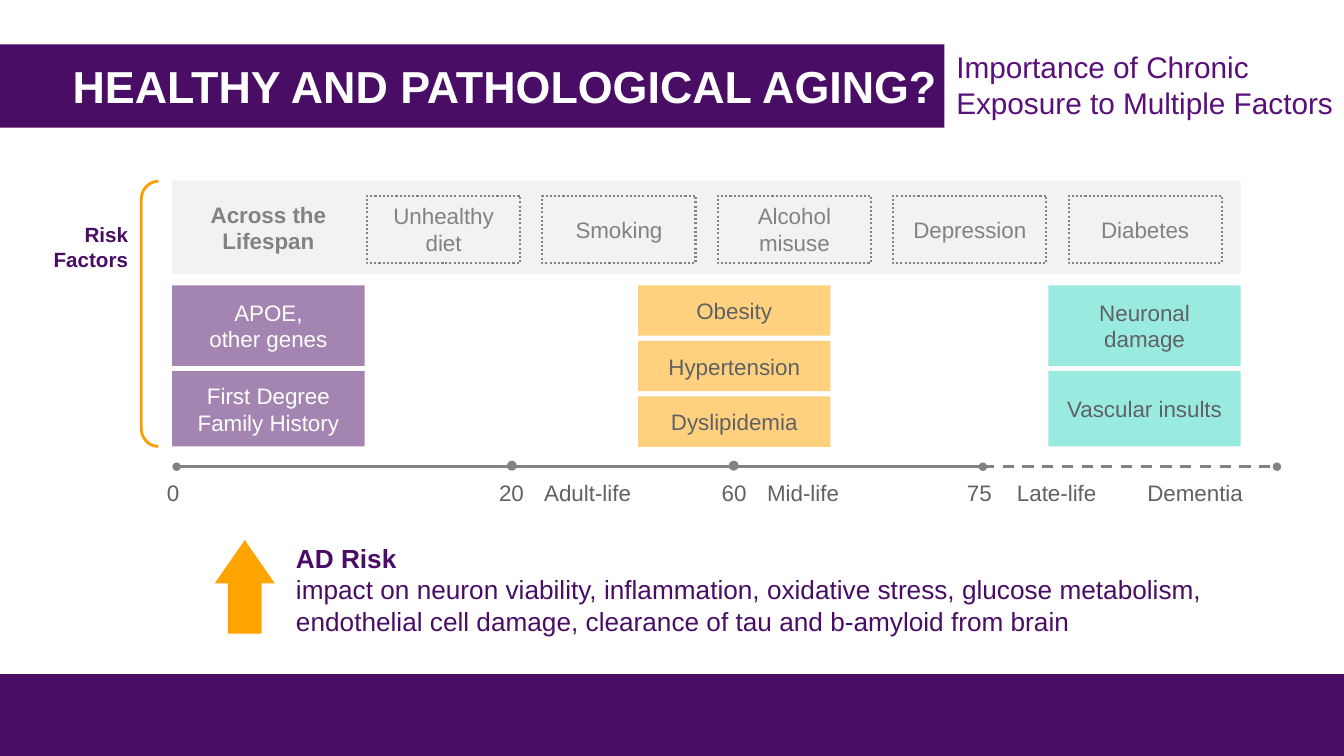
"""Build the slide on chronic risk factors in healthy and pathological aging."""
from dataclasses import dataclass

from pptx import Presentation
from pptx.dml.color import RGBColor
from pptx.enum.dml import MSO_LINE
from pptx.enum.shapes import MSO_CONNECTOR, MSO_SHAPE
from pptx.enum.text import MSO_ANCHOR, PP_ALIGN
from pptx.oxml.ns import qn
from pptx.util import Cm, Pt
from lxml.etree import SubElement


@dataclass(frozen=True)
class Theme:
    font: str = "Arial"
    purple: str = "4A0D66"
    violet: str = "59107A"
    orange: str = "FFA400"
    bracket: str = "F9A000"
    teal: str = "34D9C3"
    pale: str = "E6E6E7"
    grey: str = "808285"
    dark: str = "606164"
    white: str = "FFFFFF"
    title: float = 32
    subtitle: float = 21.3
    summary: float = 18.7
    body: float = 16
    side: float = 14.7


THEME = Theme()

TITLE = "HEALTHY AND PATHOLOGICAL AGING?"
SUBTITLE = "Importance of Chronic Exposure to Multiple Factors"
SIDE_LABEL = "Risk Factors"
LIFESPAN_LABEL = "Across the Lifespan"
LIFESPAN_FACTORS = ["Unhealthy diet", "Smoking", "Alcohol misuse", "Depression", "Diabetes"]
STACKS = [
    (4.34, THEME.purple, THEME.white,
     [("APOE,\nother genes", 2.03), ("First Degree Family History", 1.9)]),
    (16.08, THEME.orange, THEME.dark,
     [("Obesity", 1.27), ("Hypertension", 1.27), ("Dyslipidemia", 1.27)]),
    (26.42, THEME.teal, THEME.dark,
     [("Neuronal damage", 2.03), ("Vascular insults", 1.9)]),
]
TIMELINE_LABELS = [
    ("0", 4.36, 1.04), ("20", 12.89, 1.04), ("60", 18.5, 1.04), ("75", 24.68, 1.04),
    ("Adult-life", 14.81, 3.56), ("Mid-life", 20.24, 2.9),
    ("Late-life", 26.63, 4.19), ("Dementia", 30.12, 4.52),
]
TIMELINE_DOTS = [12.9, 18.49]
SUMMARY = ("AD Risk\nimpact on neuron viability, inflammation, oxidative stress, "
           "glucose metabolism, endothelial cell damage, clearance of tau and "
           "b-amyloid from brain")

STACK_TOP, STACK_GAP, COLUMN_WIDTH = 7.19, 0.13, 4.85
FACTOR_LEFT, FACTOR_PITCH = 9.25, 4.42
TIMELINE_Y, DOT_SIZE = 11.76, 0.25


def write(box, text, size, colour, align=PP_ALIGN.CENTER, bold=False,
          anchor=MSO_ANCHOR.MIDDLE, inset=True, wrap=True, after=None):
    frame = box.text_frame
    frame.text = text
    frame.word_wrap = wrap
    frame.vertical_anchor = anchor
    if not inset:
        frame.margin_left = frame.margin_right = frame.margin_top = frame.margin_bottom = 0
    for para in frame.paragraphs:
        para.alignment = align
        para.font.name = THEME.font
        para.font.size = Pt(size)
        para.font.bold = bold
        para.font.color.rgb = RGBColor.from_string(colour)
        if after:
            para.space_after = Pt(after)
    return frame


def add_text(page, place, *text, **style):
    box = page.shapes.add_textbox(*map(Cm, place))
    return write(box, *text, **style)


def add_shape(page, kind, place, fill=None, alpha=None, line=None, width=None, dash=None):
    shape = page.shapes.add_shape(kind, *map(Cm, place))
    shape.shadow.inherit = False
    if fill:
        shape.fill.solid()
        shape.fill.fore_color.rgb = RGBColor.from_string(fill)
        if alpha:
            colour = next(shape.element.spPr.iter(qn("a:srgbClr")))
            SubElement(colour, qn("a:alpha")).set("val", str(alpha * 1000))
    else:
        shape.fill.background()
    if line:
        shape.line.color.rgb = RGBColor.from_string(line)
        shape.line.width = Pt(width)
        shape.line.dash_style = dash
    else:
        shape.line.fill.background()
    return shape


def add_span(page, start, end, ends, dash=None):
    y = Cm(TIMELINE_Y)
    span = page.shapes.add_connector(MSO_CONNECTOR.STRAIGHT, Cm(start), y, Cm(end), y)
    span.line.color.rgb = RGBColor.from_string(THEME.grey)
    span.line.width = Pt(2)
    span.line.dash_style = dash
    outline = span.element.spPr.find(qn("a:ln"))
    for name in ends:
        SubElement(outline, qn(name)).set("type", "oval")
    SubElement(span.element.spPr, qn("a:effectLst"))


def add_header(page):
    add_text(page, (24.1, 1.24, 9.76, 1.83), SUBTITLE, THEME.subtitle, THEME.violet,
             align=PP_ALIGN.LEFT, anchor=MSO_ANCHOR.TOP, inset=False)
    add_shape(page, MSO_SHAPE.RECTANGLE, (0, 1.12, 23.8, 2.1), THEME.purple)
    add_text(page, (1.83, 1.47, 21.97, 1.37), TITLE, THEME.title, THEME.white,
             align=PP_ALIGN.LEFT, bold=True, anchor=MSO_ANCHOR.TOP, inset=False, wrap=False)


def add_factors(page):
    add_shape(page, MSO_SHAPE.RECTANGLE, (4.34, 4.55, 26.93, 2.36), THEME.pale, 50)
    add_text(page, (4.34, 4.72, COLUMN_WIDTH, 2.03), LIFESPAN_LABEL, THEME.body, THEME.grey,
             bold=True)
    for index, factor in enumerate(LIFESPAN_FACTORS):
        place = (FACTOR_LEFT + index * FACTOR_PITCH, 4.93, 3.86, 1.7)
        box = add_shape(page, MSO_SHAPE.RECTANGLE, place, line=THEME.grey, width=1.5,
                        dash=MSO_LINE.ROUND_DOT)
        write(box, factor, THEME.body, THEME.grey)
    for left, fill, colour, factors in STACKS:
        top = STACK_TOP
        for factor, height in factors:
            box = add_shape(page, MSO_SHAPE.RECTANGLE, (left, top, COLUMN_WIDTH, height),
                            fill, 50)
            write(box, factor, THEME.body, colour)
            top += height + STACK_GAP
    add_text(page, (0.56, 5.59, 2.67, 1.24), SIDE_LABEL, THEME.side, THEME.purple,
             align=PP_ALIGN.RIGHT, bold=True, anchor=MSO_ANCHOR.TOP, inset=False)
    bracket = add_shape(page, MSO_SHAPE.LEFT_BRACKET, (3.56, 4.57, 0.43, 6.68),
                        line=THEME.bracket, width=2)
    bracket.adjustments[0] = 1.05


def add_timeline(page):
    add_span(page, 4.45, 24.77, ["a:headEnd", "a:tailEnd"])
    add_span(page, 24.77, 32.18, ["a:tailEnd"], MSO_LINE.DASH)
    for centre in TIMELINE_DOTS:
        place = (centre - DOT_SIZE / 2, 11.61, DOT_SIZE, DOT_SIZE)
        add_shape(page, MSO_SHAPE.OVAL, place, THEME.grey)
    for label, centre, width in TIMELINE_LABELS:
        add_text(page, (centre - width / 2, 12.07, width, 0.69), label, THEME.body, THEME.dark,
                 anchor=MSO_ANCHOR.TOP, inset=False, after=16)


def add_summary(page):
    frame = add_text(page, (7.21, 13.54, 23.62, 2.64), SUMMARY, THEME.summary, THEME.purple,
                     align=PP_ALIGN.LEFT, anchor=MSO_ANCHOR.TOP)
    frame.paragraphs[0].font.bold = True
    arrow = add_shape(page, MSO_SHAPE.UP_ARROW, (5.41, 13.61, 1.52, 2.36), THEME.orange)
    arrow.adjustments[0] = 0.56
    arrow.adjustments[1] = 0.72


def main():
    deck = Presentation()
    deck.slide_width, deck.slide_height = Cm(33.87), Cm(19.05)
    page = deck.slides.add_slide(deck.slide_layouts[6])
    add_shape(page, MSO_SHAPE.RECTANGLE, (0, 16.99, 33.87, 2.06), THEME.purple)
    add_timeline(page)
    add_factors(page)
    add_summary(page)
    add_header(page)
    deck.save("out.pptx")


if __name__ == "__main__":
    main()
